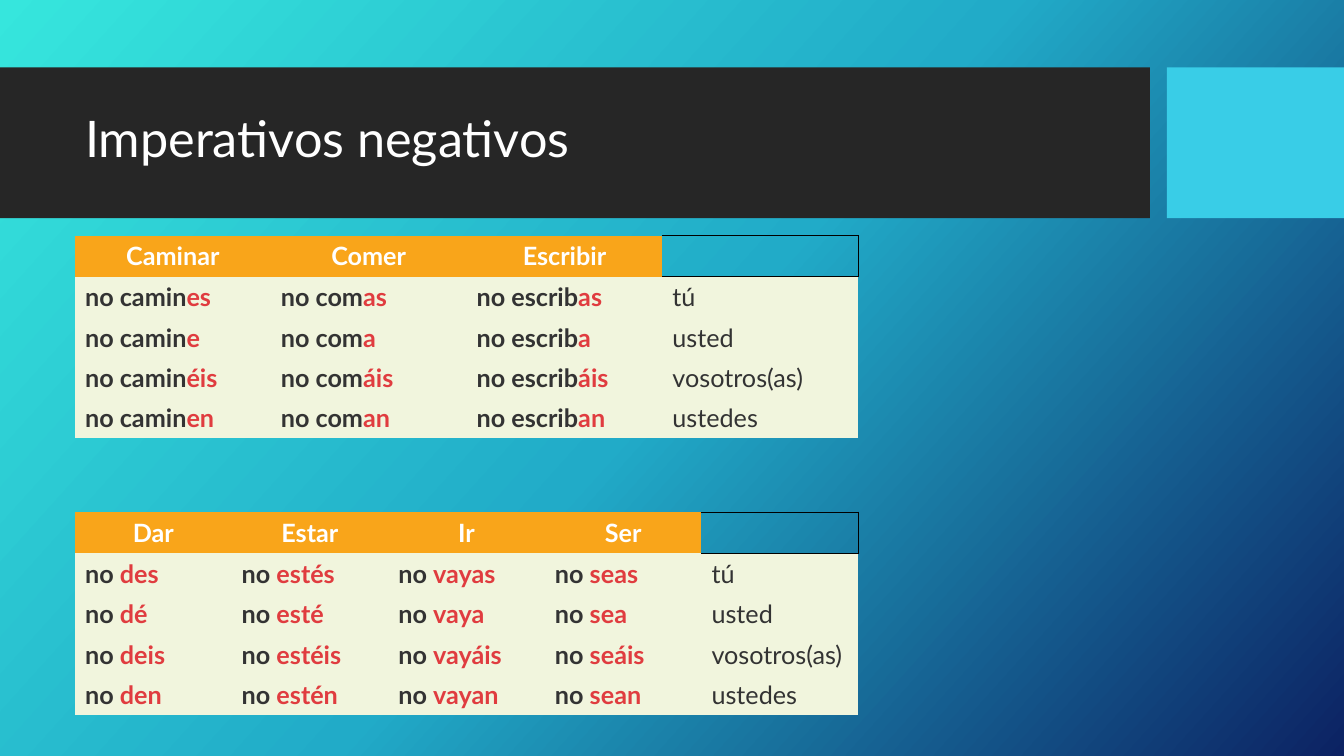
"""Build the slide on Spanish negative imperatives."""
import copy

import pptx
import pptx.dml.color
import pptx.enum.shapes
import pptx.enum.text
import pptx.oxml
import pptx.oxml.ns
import pptx.util

Cm = pptx.util.Cm
Pt = pptx.util.Pt
RGB = pptx.dml.color.RGBColor
PP = pptx.enum.text.PP_ALIGN
MIDDLE = pptx.enum.text.MSO_ANCHOR.MIDDLE

WHITE = RGB(0xFF, 0xFF, 0xFF)
DARK = RGB(0x33, 0x33, 0x33)
RED = RGB(0xE0, 0x3C, 0x3F)
ORANGE = RGB(0xF9, 0xA5, 0x1A)
CREAM = RGB(0xF1, 0xF5, 0xDD)
BAND = RGB(0x26, 0x26, 0x26)
CYAN = RGB(0x39, 0xCD, 0xE7)
GRADIENT = [(0, RGB(0x36, 0xE6, 0xDD)), (0.5, RGB(0x21, 0xAB, 0xC8)),
            (1, RGB(0x0C, 0x22, 0x63))]
NO_STYLE = "{2D5ABB26-0587-4C30-8999-92F81FD0307C}"
FONT = "Lato"
LEFT, TABLE_WIDTH, ROW_HEIGHT = 1.89, 19.74, 1.02

PRONOUNS = ["tú", "usted", "vosotros(as)", "ustedes"]
REGULAR = [
    ("Caminar", "no camin", ["es", "e", "éis", "en"]),
    ("Comer", "no com", ["as", "a", "áis", "an"]),
    ("Escribir", "no escrib", ["as", "a", "áis", "an"]),
]
IRREGULAR = [
    ("Dar", "no ", ["des", "dé", "deis", "den"]),
    ("Estar", "no ", ["estés", "esté", "estéis", "estén"]),
    ("Ir", "no ", ["vayas", "vaya", "vayáis", "vayan"]),
    ("Ser", "no ", ["seas", "sea", "seáis", "sean"]),
]


def add_run(p, text, color, size=18, bold=False):
    r = p.add_run()
    r.text = text
    r.font.name = FONT
    r.font.size = Pt(size)
    r.font.bold = bold
    r.font.color.rgb = color


def fill_cell(cell, color, runs, bold=True):
    cell.fill.solid()
    cell.fill.fore_color.rgb = color
    cell.vertical_anchor = MIDDLE
    for text, run_color in runs:
        add_run(cell.text_frame.paragraphs[0], text, run_color, bold=bold)


prs = pptx.Presentation()
prs.slide_width = Cm(33.87)
prs.slide_height = Cm(19.05)
s = prs.slides.add_slide(prs.slide_layouts[5])

fill = s.background.fill
fill.gradient()
fill.gradient_angle = 318
stops = s.background._cSld.xpath(".//a:gsLst")[0]
stops.insert(1, copy.deepcopy(stops[0]))
for stop, (position, color) in zip(fill.gradient_stops, GRADIENT):
    stop.position = position
    stop.color.rgb = color

for left, width, color in [(0, 28.98, BAND), (29.41, 4.46, CYAN)]:
    sp = s.shapes.add_shape(pptx.enum.shapes.MSO_SHAPE.RECTANGLE,
                            Cm(left), Cm(1.7), Cm(width), Cm(3.8))
    sp.shadow.inherit = False
    sp.fill.solid()
    sp.fill.fore_color.rgb = color
    sp.line.fill.background()

title = s.shapes.title
title.left, title.top = Cm(LEFT), Cm(2.07)
title.width, title.height = Cm(26.7), Cm(3)
s.shapes._spTree.append(title._element)
tf = title.text_frame
tf.vertical_anchor = MIDDLE
p = tf.paragraphs[0]
p.alignment = PP.LEFT
p.line_spacing = 0.9
add_run(p, "Imperativos negativos", WHITE, size=36)

for top, verbs in [(5.94, REGULAR), (12.91, IRREGULAR)]:
    columns = len(verbs) + 1
    rows = len(PRONOUNS) + 1
    frame = s.shapes.add_table(rows, columns, Cm(LEFT), Cm(top),
                               Cm(TABLE_WIDTH), Cm(ROW_HEIGHT * rows))
    table = frame.table
    table.first_row = False
    table.horz_banding = False
    table._tbl.tblPr.find(pptx.oxml.ns.qn("a:tableStyleId")).text = NO_STYLE
    for column in table.columns:
        column.width = Cm(TABLE_WIDTH / columns)

    for c, (verb, stem, endings) in enumerate(verbs):
        header = table.cell(0, c)
        fill_cell(header, ORANGE, [(verb, WHITE)])
        header.text_frame.paragraphs[0].alignment = PP.CENTER
        header.margin_left = header.margin_right = Cm(0.18)
        header.margin_top = header.margin_bottom = Cm(0.08)
        for i, ending in enumerate(endings, 1):
            fill_cell(table.cell(i, c), CREAM, [(stem, DARK), (ending, RED)])
    for i, pronoun in enumerate(PRONOUNS, 1):
        fill_cell(table.cell(i, columns - 1), CREAM, [(pronoun, DARK)], bold=False)

    corner = table.cell(0, columns - 1)
    corner.fill.background()
    for i, side in enumerate(["lnR", "lnT", "lnB"]):
        border = pptx.oxml.parse_xml(
            f'<a:{side} {pptx.oxml.ns.nsdecls("a")} w="12700"><a:solidFill>'
            f'<a:srgbClr val="000000"/></a:solidFill></a:{side}>')
        corner._tc.tcPr.insert(i, border)

prs.save("out.pptx")
